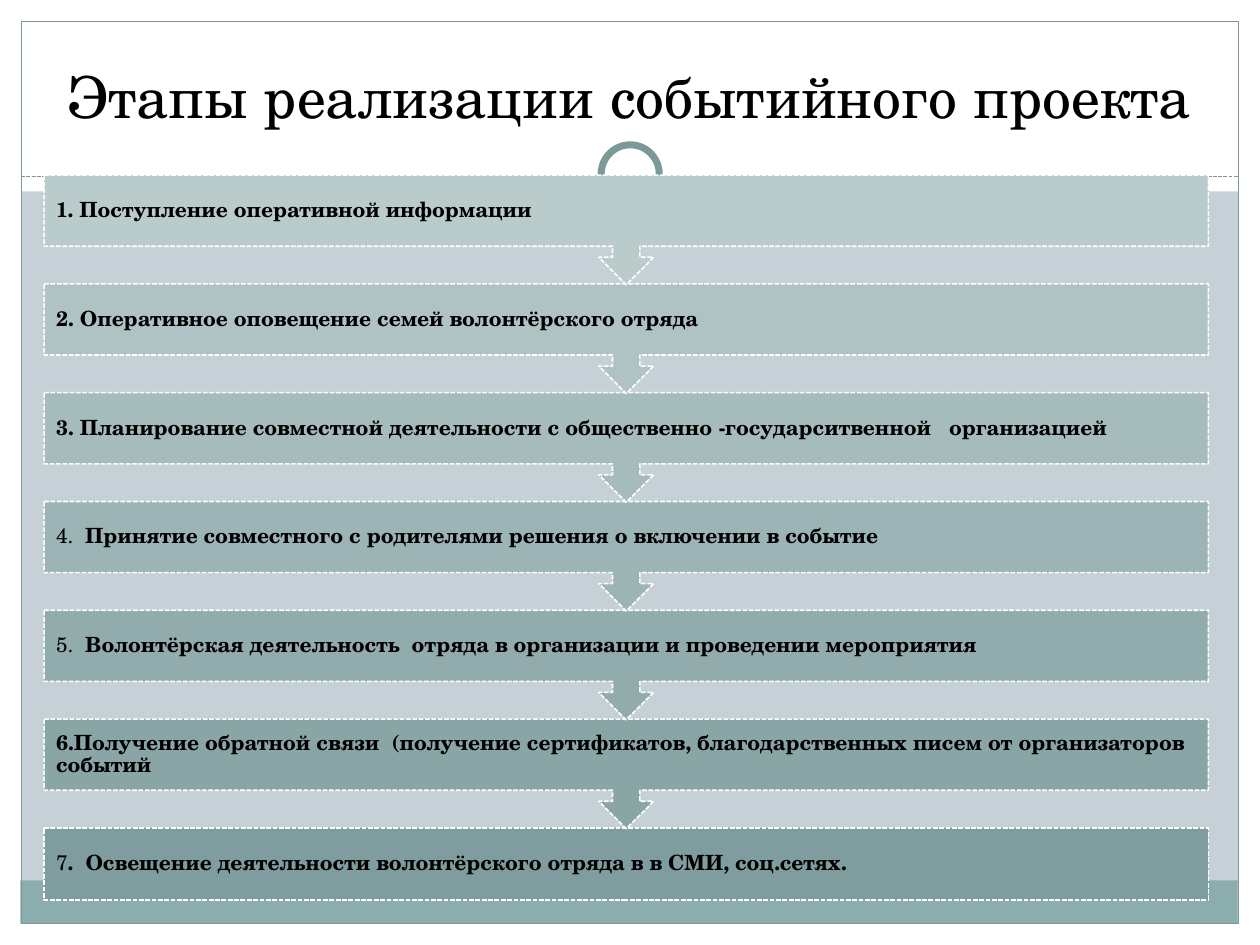
from lxml import etree
from pptx import Presentation
from pptx.dml.color import RGBColor
from pptx.enum.dml import MSO_LINE
from pptx.enum.shapes import MSO_CONNECTOR, MSO_SHAPE
from pptx.enum.text import MSO_ANCHOR, PP_ALIGN
from pptx.oxml.ns import qn
from pptx.util import Cm, Pt

RECT, OVAL = MSO_SHAPE.RECTANGLE, MSO_SHAPE.OVAL
CALLOUT = MSO_SHAPE.DOWN_ARROW_CALLOUT
DASH = MSO_LINE.SQUARE_DOT
LEFT, CENTER = PP_ALIGN.LEFT, PP_ALIGN.CENTER
MIDDLE, BOTTOM = MSO_ANCHOR.MIDDLE, MSO_ANCHOR.BOTTOM
FONT = "TeX Gyre Schola"
WHITE, BLACK, TEAL = "FFFFFF", "000000", "7C999A"


def rgb(code):
    return RGBColor.from_string(code)


def draw(kind, box, fill=None, line=None, width=0.75):
    shape = slide.shapes.add_shape(kind, *[Cm(n) for n in box])
    shape.shadow.inherit = False
    if fill:
        shape.fill.solid()
        shape.fill.fore_color.rgb = rgb(fill)
    else:
        shape.fill.background()
    if line:
        shape.line.color.rgb = rgb(line)
        shape.line.width = Pt(width)
    else:
        shape.line.fill.background()
    return shape


deck = Presentation()
deck.slide_width, deck.slide_height = Cm(25.4), Cm(19.05)
slide = deck.slides.add_slide(deck.slide_layouts[5])
slide.background.fill.solid()
slide.background.fill.fore_color.rgb = rgb("C5D1D7")

# White margins and header, footer band, frame
for box in [(0, 18.62, 25.4, 0.43), (0, 0, 25.4, 3.86),
            (0, 0, 0.43, 19.05), (24.97, 0, 0.43, 19.05)]:
    draw(RECT, box, WHITE)
draw(RECT, (0.41, 17.75, 24.54, 0.87), "8CADAE")
draw(RECT, (0.43, 0.43, 24.54, 18.19), line=TEAL)

# Dashed rule with a ring on it
rule = slide.shapes.add_connector(
    MSO_CONNECTOR.STRAIGHT, Cm(0.43), Cm(3.56), Cm(24.97), Cm(3.56))
rule.line.color.rgb = rgb(TEAL)
rule.line.width = Pt(0.75)
rule.line.dash_style = DASH
etree.SubElement(rule._element.spPr, qn("a:effectLst"))
draw(OVAL, (11.86, 2.67, 1.7, 1.7), WHITE)
draw(OVAL, (12.12, 2.92, 1.17, 1.17), WHITE, TEAL, 4)

# Title, brought in front of the header
title = slide.shapes.title
slide.shapes._spTree.append(title._element)
title.left, title.top = Cm(0.84), Cm(0.64)
title.width, title.height = Cm(23.7), Cm(2.11)
title.text_frame.text = "Этапы реализации событийного проекта"
title.text_frame.vertical_anchor = BOTTOM
para = title.text_frame.paragraphs[0]
para.alignment = CENTER
para.font.name, para.font.size = FONT, Pt(33)
para.font.color.rgb = rgb(BLACK)

# Steps: fill, plain lead, bold text
steps = [
    ("B9CBCB", "", "1. Поступление оперативной информации"),
    ("B0C3C4", "", "2. Оперативное оповещение семей волонтёрского отряда"),
    ("A6BCBC", "", "3. Планирование совместной деятельности с общественно "
                   "-государситвенной   организацией"),
    ("9CB4B5", "4.  ", "Принятие совместного с родителями решения о включении "
                       "в событие"),
    ("92ACAD", "5.  ", "Волонтёрская деятельность  отряда в организации и "
                       "проведении мероприятия"),
    ("89A5A6", "", "6.Получение обратной связи  (получение сертификатов, "
                   "благодарственных писем от организаторов событий"),
    ("7F9D9E", "7", ".  Освещение деятельности волонтёрского отряда в в СМИ, "
                    "соц.сетях."),
]
last = len(steps) - 1
gap = 13.16 / last

# Last step lies at the back, each arrow overlaps the step below
for i in range(last, -1, -1):
    fill, lead, text = steps[i]
    kind, high = (RECT, 1.45) if i == last else (CALLOUT, 2.21)
    step = draw(kind, (0.89, 3.53 + i * gap, 23.47, high), fill, WHITE, 0.9)
    step.line.dash_style = DASH
    frame = step.text_frame
    frame.word_wrap = True
    frame.vertical_anchor = MIDDLE
    frame.margin_left = frame.margin_right = Cm(0.24)
    frame.margin_top = frame.margin_bottom = Cm(0.24)
    para = frame.paragraphs[0]
    para.alignment = LEFT
    para.line_spacing = 0.9
    para.font.name, para.font.size = FONT, Pt(12)
    para.font.color.rgb = rgb(BLACK)
    for part, bold in [(lead, False), (text, True)]:
        if part:
            run = para.add_run()
            run.text = part
            run.font.bold = bold

deck.save("out.pptx")
